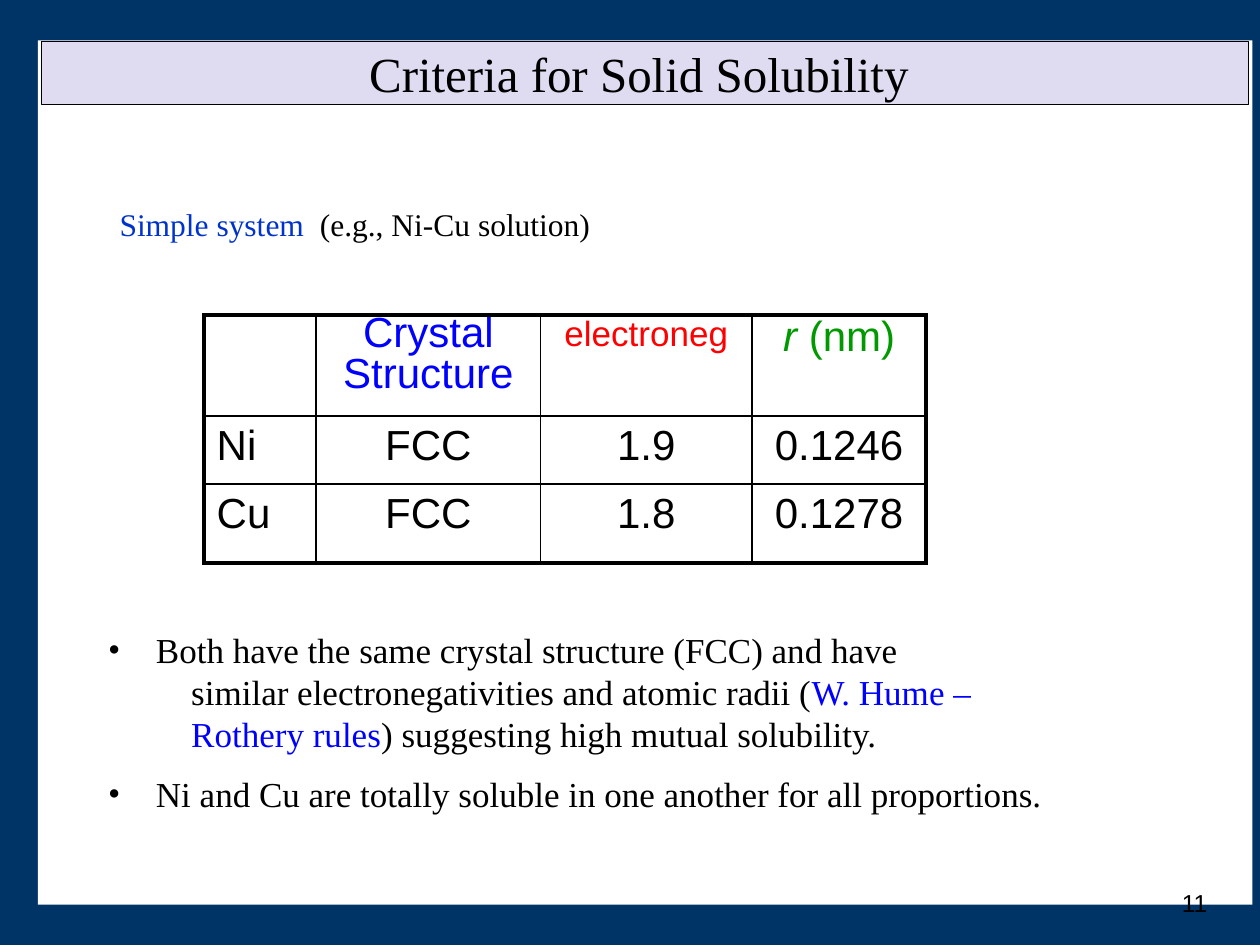
import dataclasses

import pptx
import pptx.dml.color
import pptx.enum.shapes
import pptx.enum.text
import pptx.oxml.ns
import pptx.util
from lxml import etree

Inches = pptx.util.Inches
Pt = pptx.util.Pt
ALIGN = pptx.enum.text.PP_ALIGN
qualified = pptx.oxml.ns.qn


@dataclasses.dataclass(frozen=True)
class Theme:
    background: str = "003366"
    panel: str = "FFFFFF"
    title_fill: str = "DFDBF1"
    ink: str = "000000"
    blue: str = "0000FF"
    deep_blue: str = "0033CC"
    red: str = "FF0000"
    green: str = "009900"
    serif: str = "Times New Roman"
    sans: str = "Arial"
    title_size: int = 28
    table_size: int = 24
    body_size: int = 20
    lead_size: int = 18
    number_size: int = 14
    thin: float = 1
    thick: float = 2.25


def rgb(value):
    return pptx.dml.color.RGBColor.from_string(value)


class SlideBuilder:
    """Holds the theme and the current slide."""

    def __init__(self, presentation, theme):
        self.theme = theme
        self.slide = presentation.slides.add_slide(presentation.slide_layouts[5])
        fill = self.slide.background.fill
        fill.solid()
        fill.fore_color.rgb = rgb(theme.background)

    def fill_paragraph(self, paragraph, runs, font, size, **paragraph_format):
        """Fill a paragraph with (text, color, extra font values) runs."""
        for name, value in paragraph_format.items():
            setattr(paragraph, name, value)
        for text, color, *extra in runs:
            run = paragraph.add_run()
            run.text = text
            run.font.color.rgb = rgb(color)
            values = {"name": font, "size": Pt(size), "bold": False}
            for name, value in (values | dict(*extra)).items():
                setattr(run.font, name, value)

    def panel(self, left, top, width, height):
        shape = self.slide.shapes.add_shape(
            pptx.enum.shapes.MSO_SHAPE.RECTANGLE,
            Inches(left), Inches(top), Inches(width), Inches(height))
        shape.shadow.inherit = False
        shape.fill.solid()
        shape.fill.fore_color.rgb = rgb(self.theme.panel)
        shape.line.fill.background()

    def title(self, text, left, top, width, height):
        shape = self.slide.shapes.title
        box = {"left": left, "top": top, "width": width, "height": height}
        for name, value in box.items():
            setattr(shape, name, Inches(value))
        shape.fill.solid()
        shape.fill.fore_color.rgb = rgb(self.theme.title_fill)
        shape.line.color.rgb = rgb(self.theme.ink)
        shape.line.width = Pt(0.75)
        frame = shape.text_frame
        frame.auto_size = pptx.enum.text.MSO_AUTO_SIZE.NONE
        frame.vertical_anchor = pptx.enum.text.MSO_ANCHOR.MIDDLE
        self.fill_paragraph(frame.paragraphs[0], [(text, self.theme.ink)],
                            self.theme.serif, self.theme.title_size,
                            alignment=ALIGN.CENTER)
        # Bring the title in front of the panel
        shape.element.getparent().append(shape.element)

    def text_box(self, left, top, width, height):
        shape = self.slide.shapes.add_textbox(
            Inches(left), Inches(top), Inches(width), Inches(height))
        shape.text_frame.word_wrap = True
        return shape.text_frame

    def line_of_text(self, runs, box, font, size, alignment=ALIGN.LEFT):
        frame = self.text_box(*box)
        self.fill_paragraph(frame.paragraphs[0], runs, font, size, alignment=alignment)

    def bullet(self, lines, box):
        """First line carries the bullet; later lines sit further in."""
        frame = self.text_box(*box)
        for index, runs in enumerate(lines):
            paragraph = frame.add_paragraph() if index else frame.paragraphs[0]
            self.fill_paragraph(paragraph, runs, self.theme.serif, self.theme.body_size)
            properties = paragraph._p.get_or_add_pPr()
            margin = Inches(0.66 if index else 0.38)
            properties.set("marL", str(margin))
            properties.set("indent", str(0 if index else -margin))
            if index == 0:
                etree.SubElement(properties, qualified("a:buFont"),
                                 typeface=self.theme.serif)
                etree.SubElement(properties, qualified("a:buChar"), char="•")

    def border(self, cell, side, width):
        properties = cell._tc.get_or_add_tcPr()
        line = etree.SubElement(properties, qualified(f"a:ln{side}"), w=str(Pt(width)))
        fill = etree.SubElement(line, qualified("a:solidFill"))
        etree.SubElement(fill, qualified("a:srgbClr"), val=self.theme.ink)

    def table(self, rows, left, top, widths, heights):
        """Each cell is (paragraphs, size, line spacing)."""
        last_row, last_column = len(heights) - 1, len(widths) - 1
        table = self.slide.shapes.add_table(
            len(heights), len(widths), Inches(left), Inches(top),
            Inches(sum(widths)), Inches(sum(heights))).table
        table.first_row = table.horz_banding = False
        for column, width in zip(table.columns, widths):
            column.width = Inches(width)
        for row, height in zip(table.rows, heights):
            row.height = Inches(height)
        for i, row in enumerate(rows):
            for j, (paragraphs, size, spacing) in enumerate(row):
                cell = table.cell(i, j)
                outer = {"L": j == 0, "R": j == last_column,
                         "T": i == 0, "B": i == last_row}
                for side, is_outer in outer.items():
                    self.border(cell, side, self.theme.thick if is_outer else self.theme.thin)
                cell.fill.background()
                frame = cell.text_frame
                for index, runs in enumerate(paragraphs):
                    paragraph = frame.add_paragraph() if index else frame.paragraphs[0]
                    self.fill_paragraph(paragraph, runs, self.theme.sans, size,
                                        alignment=ALIGN.CENTER if j else ALIGN.LEFT,
                                        line_spacing=spacing, space_before=Pt(size * 0.2))


def main():
    theme = Theme()
    presentation = pptx.Presentation()
    presentation.slide_width = Inches(10)
    presentation.slide_height = Inches(7.5)
    builder = SlideBuilder(presentation, theme)

    # Frame: white panel, page number, title bar
    builder.panel(0.3, 0.32, 9.64, 6.86)
    builder.line_of_text([("11", theme.ink)], (8.39, 7, 1.29, 0.39),
                         theme.sans, theme.number_size, ALIGN.RIGHT)
    builder.title("Criteria for Solid Solubility ", 0.33, 0.33, 9.58, 0.5)

    # Element comparison
    size = theme.table_size
    header = [
        ([[]], size, 1.0),
        ([[("Crystal", theme.blue)], [("Structure", theme.blue)]], size, 0.7),
        ([[("electroneg", theme.red)]], theme.body_size, 0.8),
        ([[("r", theme.green, {"italic": True}), (" (nm)", theme.green)]], size, 0.8),
    ]
    elements = [("Ni", "FCC", "1.9", "0.1246"), ("Cu", "FCC", "1.8", "0.1278")]
    body = [[([[(value, theme.ink)]], size, 1.0) for value in element]
            for element in elements]
    builder.table([header] + body, 1.62, 2.5,
                  widths=(0.89, 1.78, 1.68, 1.38), heights=(0.8, 0.54, 0.63))

    # Lead-in above the table
    builder.line_of_text(
        [("Simple system", theme.deep_blue), ("  (e.g., Ni-Cu solution)", theme.ink)],
        (0.85, 1.58, 5.61, 0.5), theme.serif, theme.lead_size)

    # Conclusions
    builder.bullet([
        [("Both have the same crystal structure (FCC) and have", theme.ink)],
        [("similar electronegativities and atomic radii (", theme.ink),
         ("W. Hume –", theme.blue)],
        [("Rothery rules", theme.blue),
         (") suggesting high mutual solubility.", theme.ink)],
    ], (0.76, 4.94, 7.9, 1.1))
    builder.bullet([
        [("Ni and Cu are totally soluble in one another for all proportions.", theme.ink)],
    ], (0.76, 6.08, 8.07, 0.43))

    presentation.save("out.pptx")


if __name__ == "__main__":
    main()
